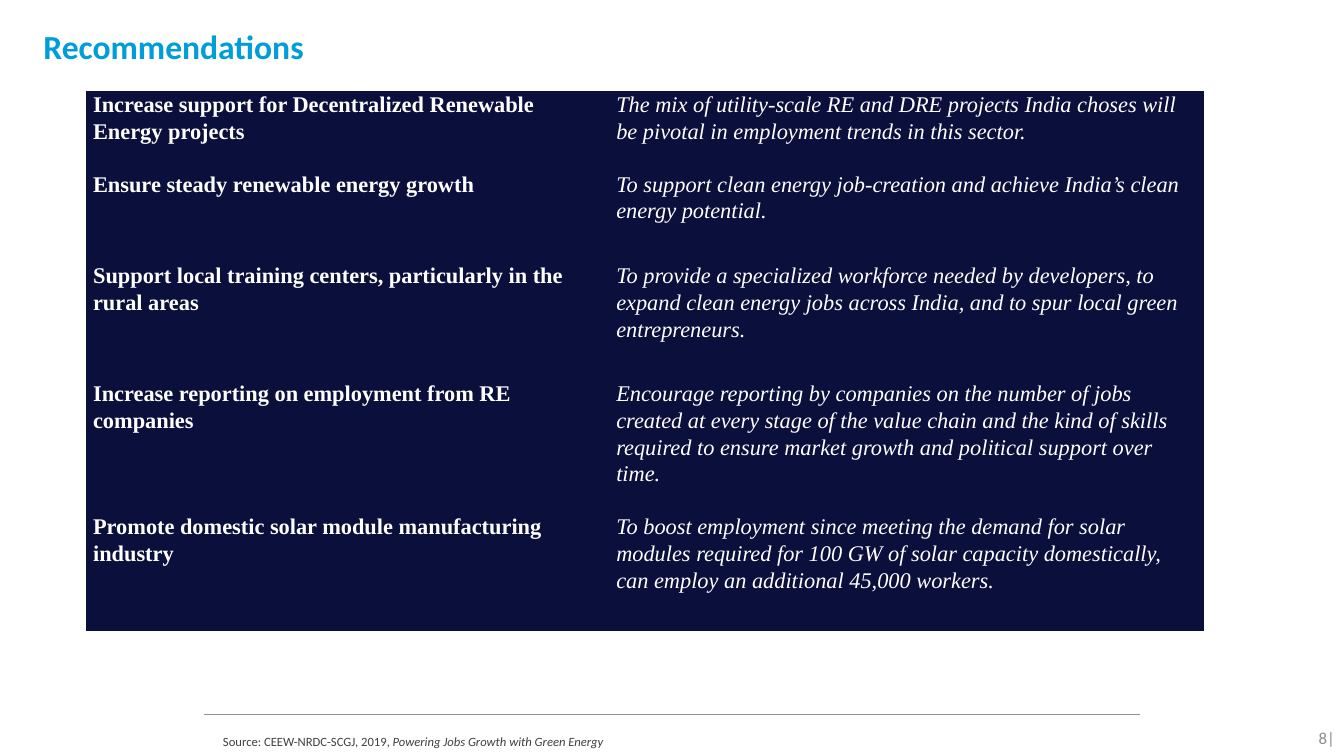
from pptx import Presentation
from pptx.dml.color import RGBColor
from pptx.enum.shapes import MSO_CONNECTOR as Connector
from pptx.enum.text import MSO_ANCHOR as Anchor, PP_ALIGN as Align
from pptx.oxml.ns import qn
from pptx.util import Pt
from lxml import etree

NAVY = RGBColor(0x0B, 0x0F, 0x3B)
WHITE = RGBColor(0xFF, 0xFF, 0xFF)
BLUE = RGBColor(0x00, 0x9E, 0xD8)
RULE_GREY = RGBColor(0x8F, 0x91, 0x94)
NUMBER_GREY = RGBColor(0x8C, 0x8C, 0x8C)
SOURCE_GREY = RGBColor(0x40, 0x40, 0x40)
PLAIN_TABLE_STYLE = "{2D5ABB26-0587-4C30-8999-92F81FD0307C}"

COLUMN_WIDTHS = (373.7, 424.8)
# Row height, recommendation, reason
RECOMMENDATIONS = [
    (57, "Increase support for Decentralized Renewable Energy projects",
     "The mix of utility-scale RE and DRE projects India choses will be pivotal "
     "in employment trends in this sector."),
    (65.5, "Ensure steady renewable energy growth",
     "To support clean energy job-creation and achieve India’s clean energy potential."),
    (84.3, "Support local training centers, particularly in the rural areas",
     "To provide a specialized workforce needed by developers, to expand clean energy "
     "jobs across India, and to spur local green entrepreneurs."),
    (95, "Increase reporting on employment from RE companies",
     "Encourage reporting by companies on the number of jobs created at every stage of "
     "the value chain and the kind of skills required to ensure market growth and "
     "political support over time."),
    (84.3, "Promote domestic solar module manufacturing industry",
     "To boost employment since meeting the demand for solar modules required for "
     "100 GW of solar capacity domestically, can employ an additional 45,000 workers."),
]


def set_attributes(target, values):
    for name, value in values.items():
        setattr(target, name, value)


def add_span(para, text, color, **font_values):
    span = para.add_run()
    span.text = text
    set_attributes(span.font, font_values)
    span.font.color.rgb = color


def add_text(page, place, spans, color, size, align=Align.LEFT,
             anchor=Anchor.MIDDLE, margins=(7.2, 7.2)):
    box = page.shapes.add_textbox(*map(Pt, place))
    frame = box.text_frame
    set_attributes(frame, {
        "word_wrap": True, "vertical_anchor": anchor,
        "margin_left": Pt(margins[0]), "margin_right": Pt(margins[1]),
        "margin_top": Pt(3.6), "margin_bottom": Pt(3.6)})
    para = frame.paragraphs[0]
    para.alignment = align
    for text, style in spans:
        add_span(para, text, color, name="Calibri", size=Pt(size), **style)


def fill_cell(cell, text, **style):
    cell.fill.solid()
    cell.fill.fore_color.rgb = NAVY
    set_attributes(cell, {
        "margin_left": Pt(5), "margin_right": Pt(5),
        "margin_top": Pt(0), "margin_bottom": Pt(0),
        "vertical_anchor": Anchor.TOP})
    para = cell.text_frame.paragraphs[0]
    para.line_spacing = 1.07
    add_span(para, text, WHITE, name="Times New Roman", size=Pt(16), **style)


def add_recommendations(page, left, top):
    height = sum(row[0] for row in RECOMMENDATIONS)
    frame = page.shapes.add_table(
        len(RECOMMENDATIONS), len(COLUMN_WIDTHS),
        Pt(left), Pt(top), Pt(sum(COLUMN_WIDTHS)), Pt(height))
    table = frame.table
    set_attributes(table, {"first_row": False, "horz_banding": False})
    # Plain style without grid lines
    frame._element.find(".//" + qn("a:tableStyleId")).text = PLAIN_TABLE_STYLE
    for column, width in zip(table.columns, COLUMN_WIDTHS):
        column.width = Pt(width)
    for index, (row_height, action, reason) in enumerate(RECOMMENDATIONS):
        table.rows[index].height = Pt(row_height)
        fill_cell(table.cell(index, 0), action, bold=True)
        fill_cell(table.cell(index, 1), reason, italic=True)


def add_rule(page, left, right, y):
    rule = page.shapes.add_connector(
        Connector.STRAIGHT, Pt(left), Pt(y), Pt(right), Pt(y))
    rule.line.color.rgb = RULE_GREY
    rule.line.width = Pt(0.75)
    etree.SubElement(rule._element.spPr, qn("a:effectLst"))


def main():
    deck = Presentation()
    deck.slide_width, deck.slide_height = Pt(960), Pt(540)
    page = deck.slides.add_slide(deck.slide_layouts[6])

    # Footer rule and page number
    add_rule(page, 145.5, 814.5, 510.5)
    add_text(page, (899.3, 512.6, 61.2, 28.8), [("8|", {})],
             NUMBER_GREY, 12, align=Align.RIGHT)

    # Title
    add_text(page, (31, 15, 888.5, 62.6), [("Recommendations", {"bold": True})],
             BLUE, 24, anchor=Anchor.TOP, margins=(0, 0))

    # Recommendations and their reasons
    add_recommendations(page, 61.5, 64.8)

    # Source line
    add_text(page, (159.3, 520, 645.8, 20),
             [("Source: CEEW-NRDC-SCGJ, 2019, ", {}),
              ("Powering Jobs Growth with Green Energy", {"italic": True})],
             SOURCE_GREY, 9, margins=(0, 7.2))

    deck.save("out.pptx")


if __name__ == "__main__":
    main()
